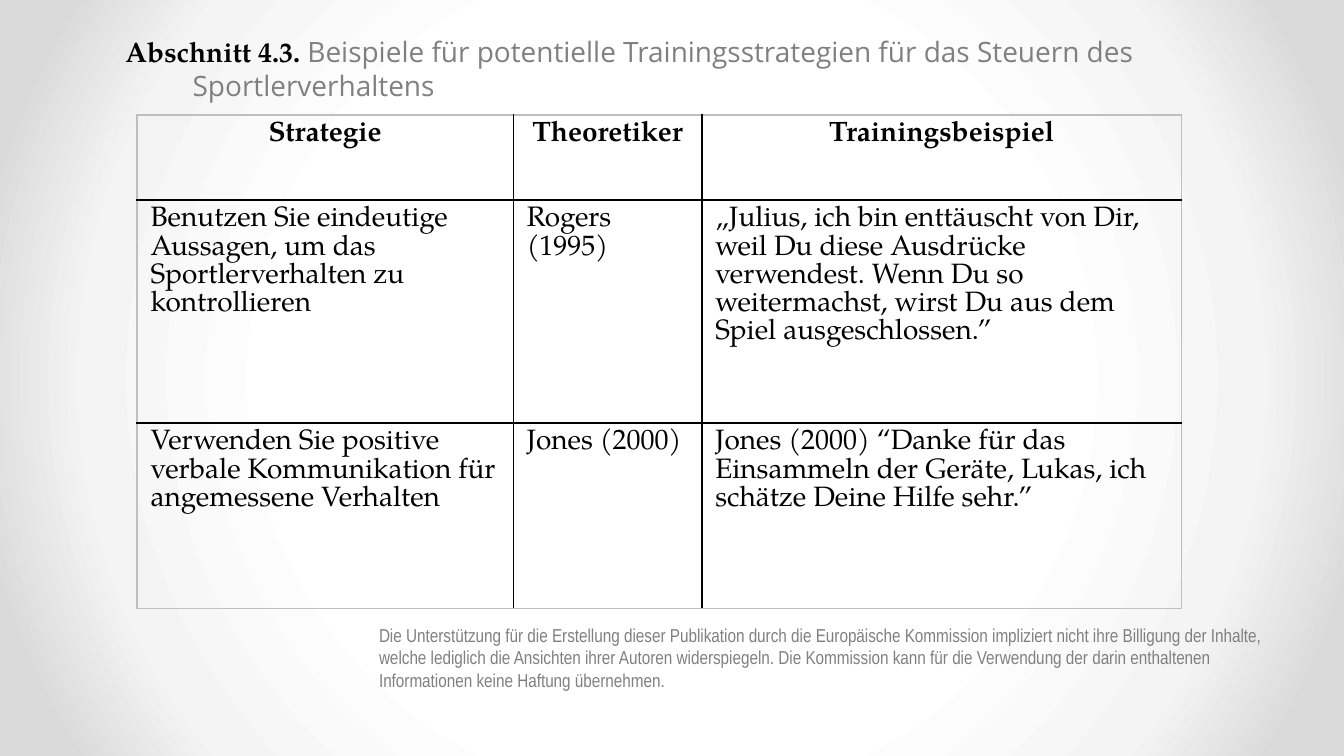
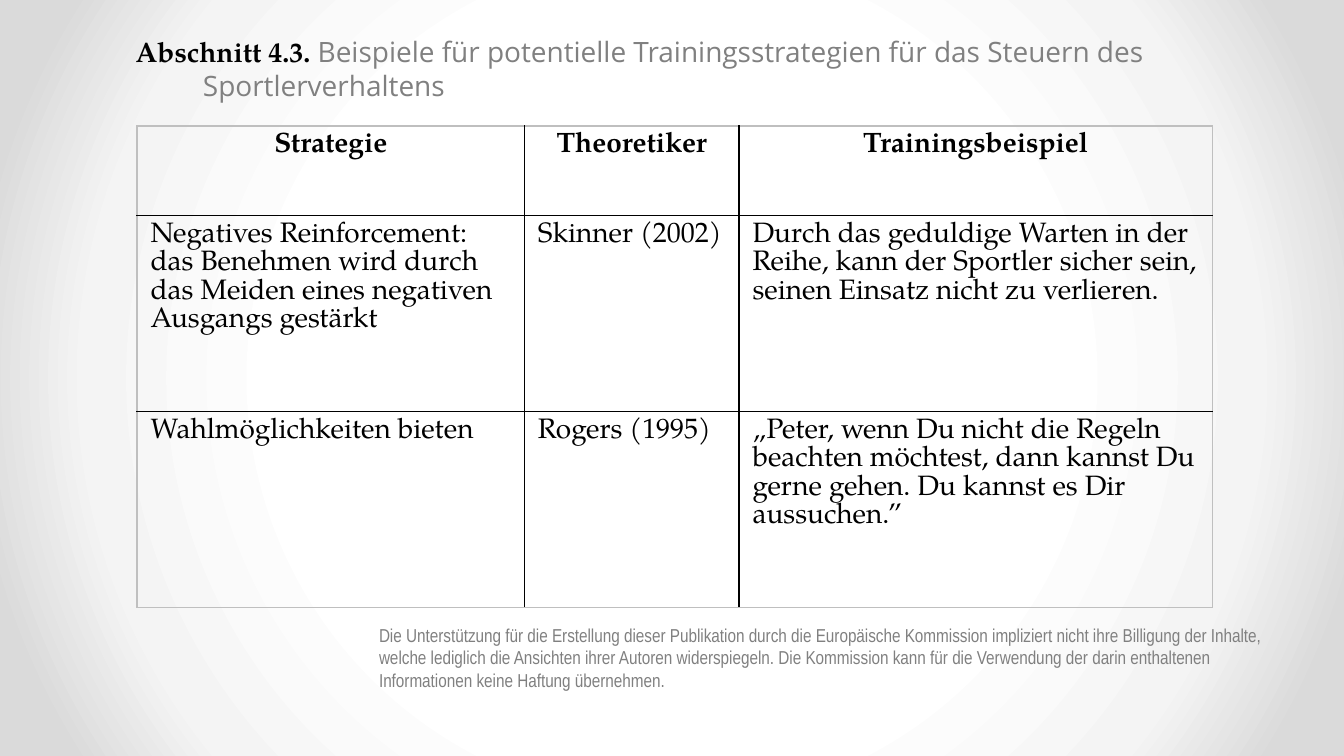
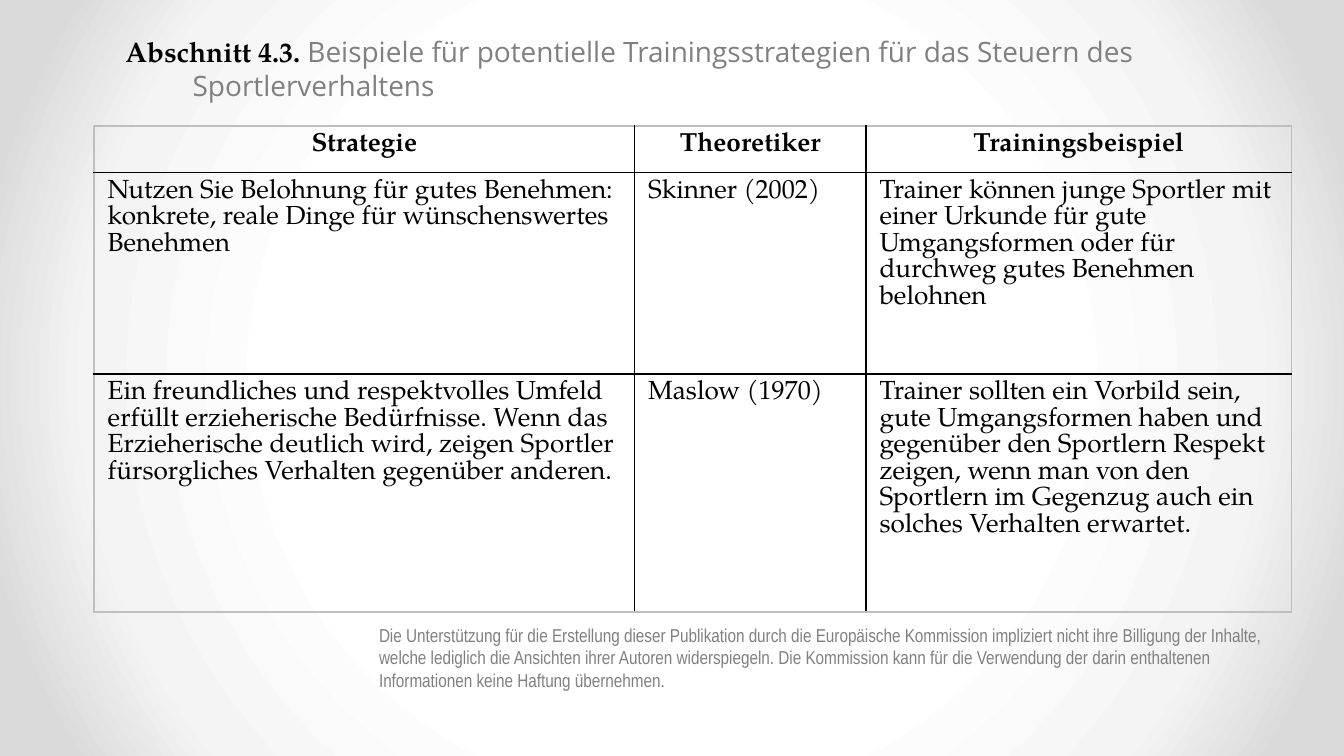
from dataclasses import dataclass

from lxml.etree import SubElement
from pptx import Presentation
from pptx.dml.color import RGBColor
from pptx.enum.text import MSO_ANCHOR, MSO_AUTO_SIZE, PP_ALIGN
from pptx.oxml import parse_xml
from pptx.oxml.ns import nsdecls, qn
from pptx.util import Emu, Pt

SCALE = 6350  # EMU per px, 144 px to the inch


@dataclass(frozen=True)
class Theme:
    ink: str = "000000"
    gray: str = "808080"
    frame: str = "BFBFBF"
    glow: tuple = ((50, "FFFFFF"), (76, "F4F4F4"), (92, "DADADA"))
    serif: str = "TeX Gyre Pagella"
    sans: str = "Open Sans"
    narrow: str = "Arial Narrow"
    head: int = 15
    note: int = 10
    rule: int = 1


@dataclass(frozen=True)
class Box:
    left: int
    top: int
    width: int
    height: int


@dataclass(frozen=True)
class Page:
    title: Box
    left: int
    top: int
    cols: tuple
    rows: tuple
    size: int
    cells: tuple


THEME = Theme()
LABEL = "Abschnitt 4.3. "
TOPIC = ("Beispiele für potentielle Trainingsstrategien für das Steuern des "
         "Sportlerverhaltens")
NOTE = ("Die Unterstützung für die Erstellung dieser Publikation durch die "
        "Europäische Kommission impliziert nicht ihre Billigung der Inhalte, "
        "welche lediglich die Ansichten ihrer Autoren widerspiegeln. Die "
        "Kommission kann für die Verwendung der darin enthaltenen "
        "Informationen keine Haftung übernehmen.")
NOTE_BOX = Box(392, 661, 998, 96)
HEADS = ("Strategie", "Theoretiker", "Trainingsbeispiel")

PAGES = (
    Page(Box(120, 30, 1171, 50), 147, 123, (403, 202, 514), (91, 239, 199), 15, (
        ("Benutzen Sie eindeutige Aussagen, um das Sportlerverhalten zu "
         "kontrollieren",
         "Rogers (1995)",
         "„Julius, ich bin enttäuscht von Dir, weil Du diese Ausdrücke "
         "verwendest. Wenn Du so weitermachst, wirst Du aus dem Spiel "
         "ausgeschlossen.”"),
        ("Verwenden Sie positive verbale Kommunikation für angemessene "
         "Verhalten",
         "Jones (2000)",
         "Jones (2000) “Danke für das Einsammeln der Geräte, Lukas, ich "
         "schätze Deine Hilfe sehr.”"),
    )),
    Page(Box(131, 30, 1181, 50), 147, 135, (415, 230, 507), (96, 210, 210), 15, (
        ("Negatives Reinforcement: das Benehmen wird durch das Meiden eines "
         "negativen Ausgangs gestärkt",
         "Skinner (2002)",
         "Durch das geduldige Warten in der Reihe, kann der Sportler sicher "
         "sein, seinen Einsatz nicht zu verlieren."),
        ("Wahlmöglichkeiten bieten",
         "Rogers (1995)",
         "„Peter, wenn Du nicht die Regeln beachten möchtest, dann kannst Du "
         "gerne gehen. Du kannst es Dir aussuchen.”"),
    )),
    Page(Box(120, 30, 1293, 50), 101, 135, (579, 248, 456), (50, 216, 255), 14, (
        ("Nutzen Sie Belohnung für gutes Benehmen: konkrete, reale Dinge für "
         "wünschenswertes Benehmen",
         "Skinner (2002)",
         "Trainer können junge Sportler mit einer Urkunde für gute "
         "Umgangsformen oder für durchweg gutes Benehmen belohnen"),
        ("Ein freundliches und respektvolles Umfeld erfüllt erzieherische "
         "Bedürfnisse. Wenn das Erzieherische deutlich wird, zeigen Sportler "
         "fürsorgliches Verhalten gegenüber anderen.",
         "Maslow (1970)",
         "Trainer sollten ein Vorbild sein, gute Umgangsformen haben und "
         "gegenüber den Sportlern Respekt zeigen, wenn man von den Sportlern "
         "im Gegenzug auch ein solches Verhalten erwartet."),
    )),
)


def px(value: int) -> Emu:
    return Emu(value * SCALE)


def write(para, text: str, *, font: str, size: int, color: str,
          bold: bool = False, align=PP_ALIGN.LEFT) -> None:
    para.alignment = align
    run = para.add_run()
    run.text = text
    run.font.name = font
    run.font.size = Pt(size)
    run.font.bold = bold
    run.font.color.rgb = RGBColor.from_string(color)


def place(shape, box: Box):
    """Move a text shape into its box and return its first paragraph."""
    shape.left, shape.top = px(box.left), px(box.top)
    shape.width, shape.height = px(box.width), px(box.height)
    frame = shape.text_frame
    frame.word_wrap = True
    frame.vertical_anchor = MSO_ANCHOR.TOP
    frame.auto_size = MSO_AUTO_SIZE.SHAPE_TO_FIT_TEXT
    return frame.paragraphs[0]


def shade(master) -> None:
    """Give the master a round gradient that darkens to the corners."""
    master.background.fill.solid()
    stops = "".join(
        f'<a:gs pos="{pos * 1000}"><a:srgbClr val="{color}"/></a:gs>'
        for pos, color in THEME.glow)
    fill = parse_xml(
        f'<a:gradFill {nsdecls("a")} rotWithShape="1"><a:gsLst>{stops}</a:gsLst>'
        '<a:path path="circle"><a:fillToRect l="50000" t="50000" r="50000" '
        'b="50000"/></a:path></a:gradFill>')
    base = master.element.find(".//" + qn("p:bgPr"))
    base.replace(base[0], fill)


def edge(cell, outer: dict) -> None:
    """Rule the four sides; outer tells which lie on the table's frame."""
    props = cell._tc.get_or_add_tcPr()
    for spot, (side, rim) in enumerate(outer.items()):
        line = SubElement(props, qn(f"a:ln{side}"), w=str(Pt(THEME.rule)))
        fill = SubElement(line, qn("a:solidFill"))
        SubElement(fill, qn("a:srgbClr"), val=THEME.frame if rim else THEME.ink)
        props.insert(spot, line)


def grid(slide, page: Page) -> None:
    texts = (HEADS, *page.cells)
    last_row, last_col = len(page.rows) - 1, len(page.cols) - 1
    table = slide.shapes.add_table(
        len(page.rows), len(page.cols), px(page.left), px(page.top),
        px(sum(page.cols)), px(sum(page.rows))).table
    table.first_row = table.horz_banding = False
    for col, width in zip(table.columns, page.cols):
        col.width = px(width)
    for r, height in enumerate(page.rows):
        table.rows[r].height = px(height)
        for c, text in enumerate(texts[r]):
            cell = table.cell(r, c)
            cell.fill.background()
            edge(cell, {"L": c == 0, "R": c == last_col,
                        "T": r == 0, "B": r == last_row})
            write(cell.text_frame.paragraphs[0], text, font=THEME.serif,
                  size=page.size, color=THEME.ink, bold=r == 0,
                  align=PP_ALIGN.CENTER if r == 0 else PP_ALIGN.LEFT)


def title(slide, box: Box) -> None:
    para = place(slide.shapes.title, box)
    props = para._p.get_or_add_pPr()
    props.set("marL", str(px(72)))
    props.set("indent", str(px(-72)))
    write(para, LABEL, font=THEME.serif, size=THEME.head, color=THEME.ink,
          bold=True)
    write(para, TOPIC, font=THEME.sans, size=THEME.head, color=THEME.gray)


def note(slide) -> None:
    para = place(slide.shapes.add_textbox(0, 0, 0, 0), NOTE_BOX)
    write(para, NOTE, font=THEME.narrow, size=THEME.note, color=THEME.gray)


def main() -> None:
    deck = Presentation()
    deck.slide_width, deck.slide_height = px(1440), px(810)
    shade(deck.slide_master)
    for page in PAGES:
        slide = deck.slides.add_slide(deck.slide_layouts[5])
        title(slide, page.title)
        note(slide)
        grid(slide, page)
    deck.save("out.pptx")


if __name__ == "__main__":
    main()
